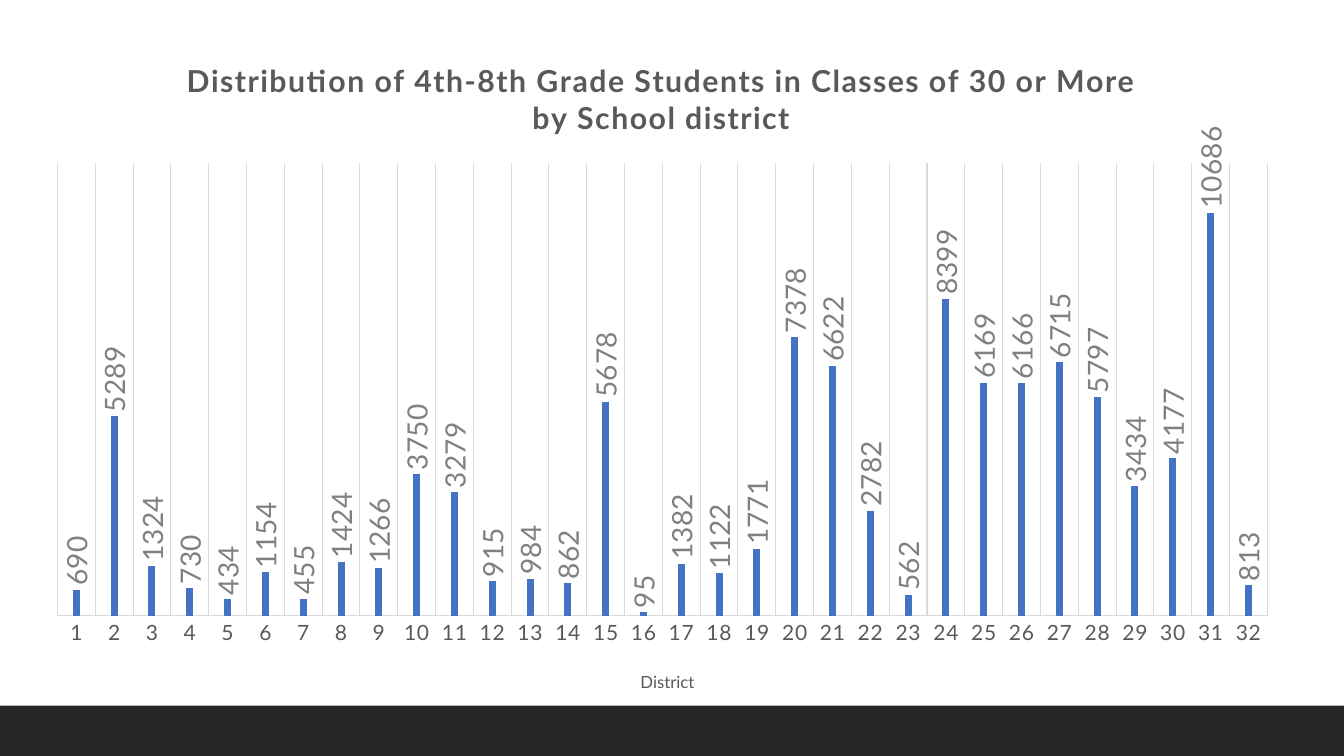
import pptx
import pptx.chart.data
import pptx.dml.color
import pptx.enum.chart
import pptx.enum.shapes
import pptx.oxml
import pptx.oxml.ns
import pptx.util

Inches = pptx.util.Inches
Pt = pptx.util.Pt
RGBColor = pptx.dml.color.RGBColor
qn = pptx.oxml.ns.qn

FOOTER_DARK = RGBColor(0x26, 0x26, 0x26)
BAR_BLUE = RGBColor(0x44, 0x72, 0xC4)
TEXT_GREY = RGBColor(0x59, 0x59, 0x59)
LABEL_GREY = RGBColor(0x80, 0x80, 0x80)
RULE_GREY = RGBColor(0xD9, 0xD9, 0xD9)
FONT = "Lato"
TITLE_LINES = ["Distribution of 4th-8th Grade Students in Classes of 30 or More", "by School district"]
STUDENTS = [
    690, 5289, 1324, 730, 434, 1154, 455, 1424,
    1266, 3750, 3279, 915, 984, 862, 5678, 95,
    1382, 1122, 1771, 7378, 6622, 2782, 562, 8399,
    6169, 6166, 6715, 5797, 3434, 4177, 10686, 813,
]


def style_font(font, size, color, bold=False):
    font.name = FONT
    font.size = Pt(size)
    font.bold = bold
    font.color.rgb = color


def set_spacing(element, spacing):
    for properties in element.xpath(".//a:defRPr"):
        properties.set("spc", str(spacing))


def place(element, index, **fractions):
    for previous in element.findall(qn("c:layout")):
        element.remove(previous)
    layout = pptx.oxml.parse_xml(
        f"<c:layout {pptx.oxml.ns.nsdecls('c')}><c:manualLayout/></c:layout>"
    )
    for tag, value in fractions.items():
        layout[0].append(layout.makeelement(qn(f"c:{tag}"), {"val": str(value)}))
    element.insert(index, layout)


def write_title(title, lines, size, position, bold=False, spacing=0):
    frame = title.text_frame
    for number, line in enumerate(lines):
        paragraph = frame.add_paragraph() if number else frame.paragraphs[0]
        paragraph.text = line
        style_font(paragraph.font, size, TEXT_GREY, bold)
    set_spacing(title._element, spacing)
    x, y = position
    place(title._element, 1, xMode="edge", yMode="edge", x=x, y=y)


def format_axes(chart):
    students = chart.value_axis
    students.visible = False
    students.has_major_gridlines = False
    students.minimum_scale = 0
    students.maximum_scale = 12000

    districts = chart.category_axis
    districts.major_tick_mark = pptx.enum.chart.XL_TICK_MARK.NONE
    districts.has_major_gridlines = True
    for line in (districts.format.line, districts.major_gridlines.format.line):
        line.color.rgb = RULE_GREY
        line.width = Pt(0.75)
    style_font(districts.tick_labels.font, 15, TEXT_GREY)
    set_spacing(districts._element, 60)
    write_title(districts.axis_title, ["District"], 12, (0.48, 0.94))


def format_bars(plot):
    plot.gap_width = 444
    plot.overlap = -90
    plot.vary_by_categories = False
    bars = plot.series[0]
    bars.format.fill.solid()
    bars.format.fill.fore_color.rgb = BAR_BLUE
    labels = bars.data_labels
    labels.show_value = True
    labels.position = pptx.enum.chart.XL_LABEL_POSITION.OUTSIDE_END
    style_font(labels.font, 20, LABEL_GREY)
    set_spacing(labels._element, 0)
    for body in labels._element.xpath(".//a:bodyPr"):
        body.set("rot", "-5400000")
        body.set("vert", "horz")


def add_district_chart(slide, left, top, width, height):
    data = pptx.chart.data.CategoryChartData()
    data.categories = [str(district) for district in range(1, len(STUDENTS) + 1)]
    data.add_series("Series 1", STUDENTS)
    kind = pptx.enum.chart.XL_CHART_TYPE.COLUMN_CLUSTERED
    chart = slide.shapes.add_chart(
        kind, Inches(left), Inches(top), Inches(width), Inches(height), data
    ).chart
    chart.font.name = FONT
    chart.font.size = Pt(10)
    chart.has_legend = False
    chart.has_title = True
    write_title(chart.chart_title, TITLE_LINES, 21.6, (0.12, 0.01), True, 100)
    format_axes(chart)
    format_bars(chart.plots[0])
    plot_area = chart._chartSpace.xpath("c:chart/c:plotArea")[0]
    place(plot_area, 0, layoutTarget="inner", xMode="edge", yMode="edge",
          x=0.02, y=0.172, w=0.96, h=0.691)


def add_footer_band(slide, left, top, width, height):
    band = slide.shapes.add_shape(
        pptx.enum.shapes.MSO_SHAPE.RECTANGLE,
        Inches(left), Inches(top), Inches(width), Inches(height),
    )
    band.shadow.inherit = False
    band.fill.solid()
    band.fill.fore_color.rgb = FOOTER_DARK
    band.line.fill.background()


def main():
    deck = pptx.Presentation()
    deck.slide_width = Inches(13.33)
    deck.slide_height = Inches(7.5)
    slide = deck.slides.add_slide(deck.slide_layouts[6])
    add_footer_band(slide, 0, 7, 13.33, 0.5)
    add_district_chart(slide, 0.32, 0.5, 12.5, 6.5)
    deck.save("out.pptx")


if __name__ == "__main__":
    main()
